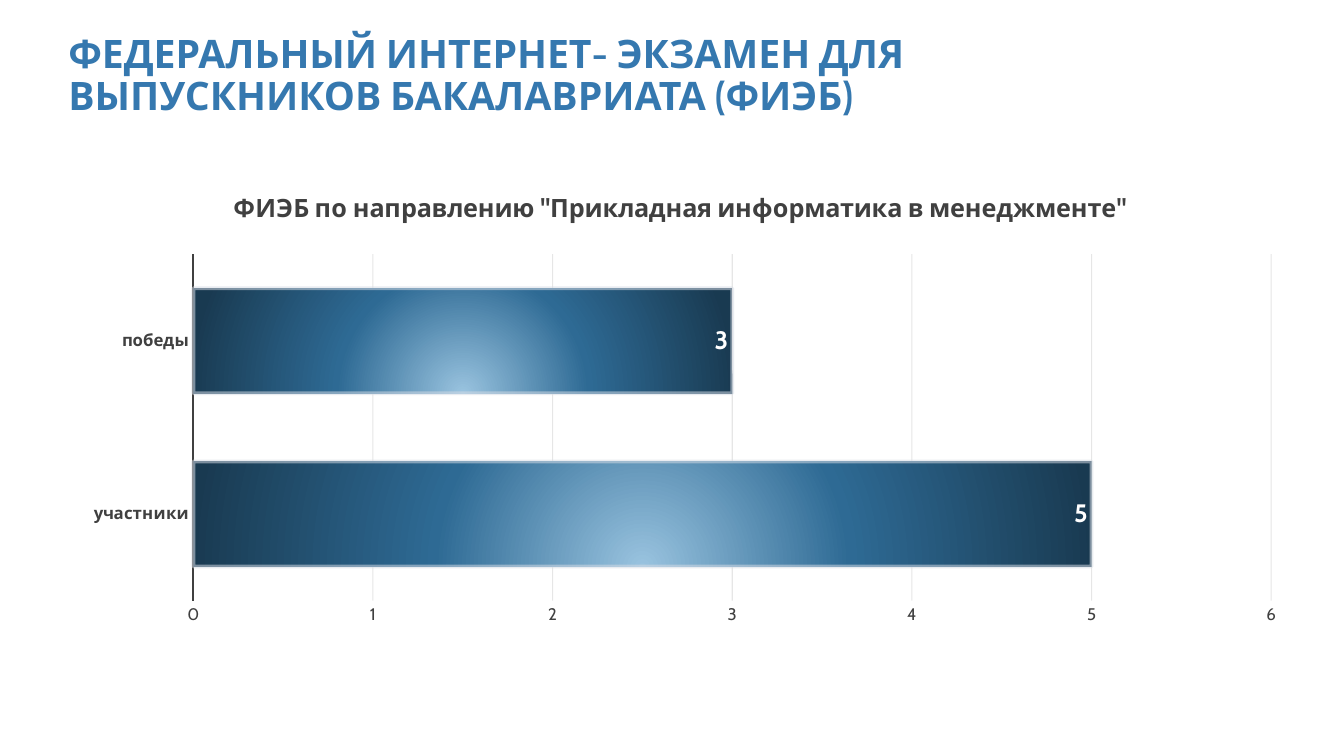
from lxml import etree
from pptx import Presentation
from pptx import util as u
from pptx.chart.data import CategoryChartData
from pptx.dml.color import RGBColor
from pptx.enum import chart as ch, text
from pptx.oxml import parse_xml
from pptx.oxml.ns import nsdecls, qn

BLUE = RGBColor(0x35, 0x78, 0xAF)
GRAY = RGBColor(0x40, 0x40, 0x40)
GRID = RGBColor(0x0D, 0x0D, 0x0D)
OUTLINE = RGBColor(0xD6, 0xDC, 0xE5)
WHITE = RGBColor(0xFF, 0xFF, 0xFF)

SERIES_STOPS = [(0, "1C415A"), (48, "2C668F"), (100, "67A5D0")]
BAR_STOPS = [(0, "99C3DF"), (46, "2E6A94"), (100, "193A51")]
LINEAR = '<a:lin ang="16200000" scaled="1"/>'
RADIAL = ('<a:path path="circle"><a:fillToRect l="50000" t="130000" '
          'r="50000" b="-30000"/></a:path>')


def gradient(stops, direction):
    gs = "".join(f'<a:gs pos="{pos * 1000}"><a:srgbClr val="{color}"/></a:gs>'
                 for pos, color in stops)
    return parse_xml(f'<a:gradFill {nsdecls("a")} rotWithShape="1">'
                     f'<a:gsLst>{gs}</a:gsLst>{direction}</a:gradFill>')


def set_opacity(root, query, percent):
    for color in root.xpath(query):
        etree.SubElement(color, qn("a:alpha")).set("val", str(percent * 1000))


class SlideBuilder:
    def __init__(self, prs, font_name):
        self.slide = prs.slides.add_slide(prs.slide_layouts[6])
        self.font_name = font_name

    def style(self, font, size, color, bold=False):
        font.name, font.size, font.bold = self.font_name, u.Pt(size), bold
        font.color.rgb = color

    def title(self, wording, x, y, w, h):
        tf = self.slide.shapes.add_textbox(
            u.Inches(x), u.Inches(y), u.Inches(w), u.Inches(h)).text_frame
        tf.word_wrap = True
        tf.vertical_anchor = text.MSO_ANCHOR.TOP
        p = tf.paragraphs[0]
        p.line_spacing = 0.9
        r = p.add_run()
        r.text = wording
        self.style(r.font, 28, BLUE, True)

    def bar_chart(self, heading, values, x, y, w, h):
        data = CategoryChartData()
        data.categories = list(values)
        data.add_series("Series 1", list(values.values()))
        chart = self.slide.shapes.add_chart(
            ch.XL_CHART_TYPE.BAR_CLUSTERED, u.Inches(x), u.Inches(y),
            u.Inches(w), u.Inches(h), data).chart
        chart.has_legend = False
        self.style(chart.font, 10, WHITE)
        chart.has_title = True
        r = chart.chart_title.text_frame.paragraphs[0].add_run()
        r.text = heading
        self.style(r.font, 18, GRAY, True)
        chart.chart_title.include_in_layout = False
        self.axes(chart)
        self.bars(chart)
        self.plot_layout(chart, x=0.104, y=0.175, w=0.877, h=0.724)

    def axes(self, chart):
        cat, val = chart.category_axis, chart.value_axis
        for axis in (cat, val):
            axis.major_tick_mark = axis.minor_tick_mark = ch.XL_TICK_MARK.NONE
            self.style(axis.tick_labels.font, 12, GRAY, axis is cat)
        cat.has_major_gridlines = False
        cat.format.line.color.rgb = GRAY
        cat.format.line.width = u.Pt(1.5)
        val.minimum_scale, val.maximum_scale, val.major_unit = 0, 6, 1
        val.format.line.fill.background()
        val.has_major_gridlines = True
        grid = val.major_gridlines.format.line
        grid.color.rgb = GRID
        grid.width = u.Pt(0.75)
        set_opacity(chart._chartSpace, ".//c:majorGridlines//a:srgbClr", 10)

    def bars(self, chart):
        plot = chart.plots[0]
        plot.gap_width = 65
        plot.vary_by_categories = False
        series = plot.series[0]
        series.invert_if_negative = False
        points = [series.points[i] for i in range(len(series.values))]
        for item in (series, *points):
            item.format.fill.solid()
            item.format.line.color.rgb = OUTLINE
            item.format.line.width = u.Pt(2.75)
        root = chart._chartSpace
        set_opacity(root, ".//c:ser//a:ln//a:srgbClr", 52)
        for query, stops, direction in (
                (".//c:ser/c:spPr", SERIES_STOPS, LINEAR),
                (".//c:ser/c:dPt/c:spPr", BAR_STOPS, RADIAL)):
            for props in root.xpath(query):
                props.replace(props.find(qn("a:solidFill")),
                              gradient(stops, direction))
        labels = series.data_labels
        labels.show_value = True
        labels.position = ch.XL_LABEL_POSITION.INSIDE_END
        self.style(labels.font, 18, WHITE, True)

    def plot_layout(self, chart, **fractions):
        """Fix the inner plot area as fractions of the chart."""
        area = chart._chartSpace.xpath(".//c:plotArea")[0]
        for old in area.findall(qn("c:layout")):
            area.remove(old)
        places = "".join(f'<c:{k} val="{v}"/>' for k, v in fractions.items())
        area.insert(0, parse_xml(
            f'<c:layout {nsdecls("c")}><c:manualLayout>'
            '<c:layoutTarget val="inner"/><c:xMode val="edge"/>'
            f'<c:yMode val="edge"/>{places}</c:manualLayout></c:layout>'))


def main():
    prs = Presentation()
    prs.slide_width, prs.slide_height = u.Inches(13.33), u.Inches(7.5)
    s = SlideBuilder(prs, "Cabin")
    s.title("ФЕДЕРАЛЬНЫЙ ИНТЕРНЕТ- ЭКЗАМЕН ДЛЯ ВЫПУСКНИКОВ БАКАЛАВРИАТА (ФИЭБ)",
            0.58, 0.29, 9.38, 1.3)
    s.bar_chart('ФИЭБ по направлению "Прикладная информатика в менеджменте"',
                {"участники": 5, "победы": 3}, 0.65, 1.69, 12.19, 4.75)
    prs.save("out.pptx")


if __name__ == "__main__":
    main()
